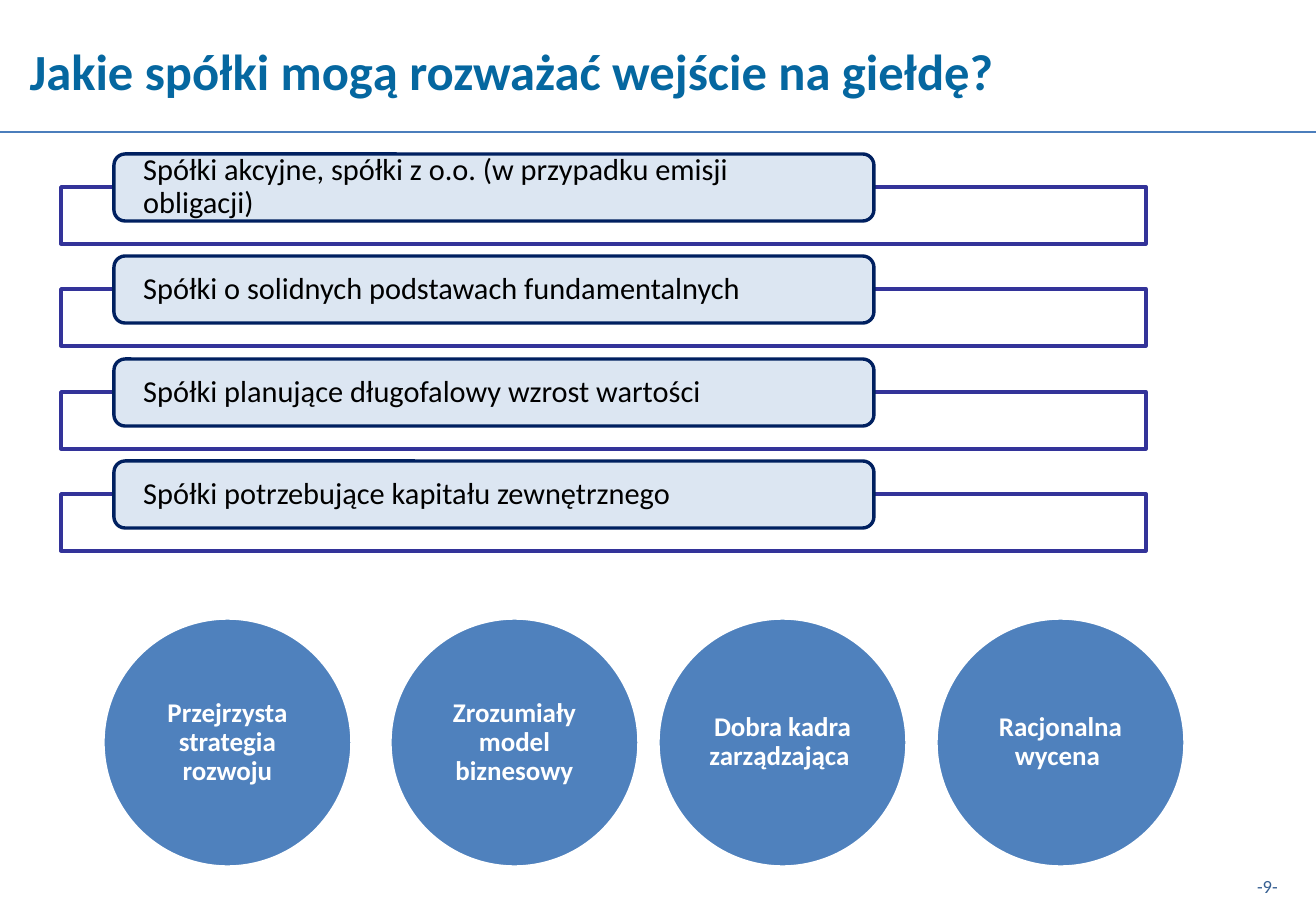
from lxml import etree
from pptx import Presentation
from pptx.dml.color import RGBColor
from pptx.enum.shapes import MSO_CONNECTOR, MSO_SHAPE
from pptx.enum.text import MSO_ANCHOR, PP_ALIGN
from pptx.oxml.ns import qn
from pptx.util import Pt

PX = 7526
RECT, ROUND, OVAL = MSO_SHAPE.RECTANGLE, MSO_SHAPE.ROUNDED_RECTANGLE, MSO_SHAPE.OVAL
STRAIGHT = MSO_CONNECTOR.STRAIGHT
MIDDLE, TOP = MSO_ANCHOR.MIDDLE, MSO_ANCHOR.TOP
LEFT, CENTER = PP_ALIGN.LEFT, PP_ALIGN.CENTER

WHITE = RGBColor(0xFF, 0xFF, 0xFF)
BLACK = RGBColor(0x00, 0x00, 0x00)
TEAL = RGBColor(0x05, 0x67, 0xA0)
RULE = RGBColor(0x4B, 0x7E, 0xBC)
INDIGO = RGBColor(0x33, 0x33, 0x99)
NAVY = RGBColor(0x00, 0x20, 0x60)
PALE = RGBColor(0xDC, 0xE6, 0xF2)
BLUE = RGBColor(0x4F, 0x81, 0xBD)
SLATE = RGBColor(0x37, 0x60, 0x92)

FIRMS = [
    "Spółki akcyjne, spółki z o.o. (w przypadku emisji obligacji)",
    "Spółki o solidnych podstawach fundamentalnych",
    "Spółki planujące długofalowy wzrost wartości",
    "Spółki potrzebujące kapitału zewnętrznego",
]
TRAITS = [
    (103, "Przejrzysta strategia rozwoju"),
    (390, "Zrozumiały model biznesowy"),
    (658, "Dobra kadra zarządzająca "),
    (936, "Racjonalna wycena "),
]


def px(*sizes):
    """Turn pixel lengths into EMU."""
    return [size * PX for size in sizes]


def write(shape, text, size, color, pad, bold=False, align=CENTER, anchor=MIDDLE, lead=None):
    """Fill a shape with one formatted paragraph."""
    frame = shape.text_frame
    frame.word_wrap = True
    frame.vertical_anchor = anchor
    frame.margin_left = frame.margin_right = pad[0] * PX
    frame.margin_top = frame.margin_bottom = pad[1] * PX
    para = frame.paragraphs[0]
    para.text = text
    para.alignment = align
    para.line_spacing = lead
    font = para.font
    font.name, font.size, font.bold = "Calibri", Pt(size), bold
    font.color.rgb = color


def add_box(slide, kind, place, fill, line):
    """Draw a filled and outlined preset shape."""
    box = slide.shapes.add_shape(kind, *px(*place))
    box.shadow.inherit = False
    box.fill.solid()
    box.fill.fore_color.rgb = fill
    box.line.color.rgb = line
    box.line.width = Pt(2)
    return box


def add_rule(slide, y, width):
    """Draw the line below the title."""
    rule = slide.shapes.add_connector(STRAIGHT, *px(0, y, width, y))
    rule.line.color.rgb = RULE
    rule.line.width = Pt(1)
    etree.SubElement(rule._element.spPr, qn("a:effectLst"))


def add_title(slide, text):
    """Place and format the title."""
    title = slide.shapes.title
    title.left, title.top, title.width, title.height = px(2, 6, 1020, 128)
    write(title, text, 30, TEAL, (13, 13), bold=True)


def add_firm(slide, top, text):
    """Draw a labelled tab over a wide frame."""
    add_box(slide, RECT, (61, top + 33, 1085, 57), WHITE, INDIGO)
    tab = add_box(slide, ROUND, (114, top, 760, 67), PALE, NAVY)
    write(tab, text, 18, BLACK, (26, 0), align=LEFT, lead=0.9)


def add_trait(slide, left, text):
    """Draw a labelled circle."""
    disc = add_box(slide, OVAL, (left, 618, 249, 249), BLUE, WHITE)
    write(disc, text, 16, WHITE, (2, 2), bold=True, lead=0.9)


def add_page(slide, text):
    """Write the page number."""
    box = slide.shapes.add_textbox(*px(1217, 869, 101, 35))
    write(box, text, 11, SLATE, (12, 6), anchor=TOP)


def main():
    """Build and save the slide."""
    deck = Presentation()
    deck.slide_width, deck.slide_height = px(1316, 911)
    slide = deck.slides.add_slide(deck.slide_layouts[5])
    add_rule(slide, 132, 1316)
    add_page(slide, "-9-")
    add_title(slide, "Jakie spółki mogą rozważać wejście na giełdę?")
    for row, text in enumerate(FIRMS):
        add_firm(slide, 154 + row * 205 // 2, text)
    for left, text in TRAITS:
        add_trait(slide, left, text)
    deck.save("out.pptx")


if __name__ == "__main__":
    main()
